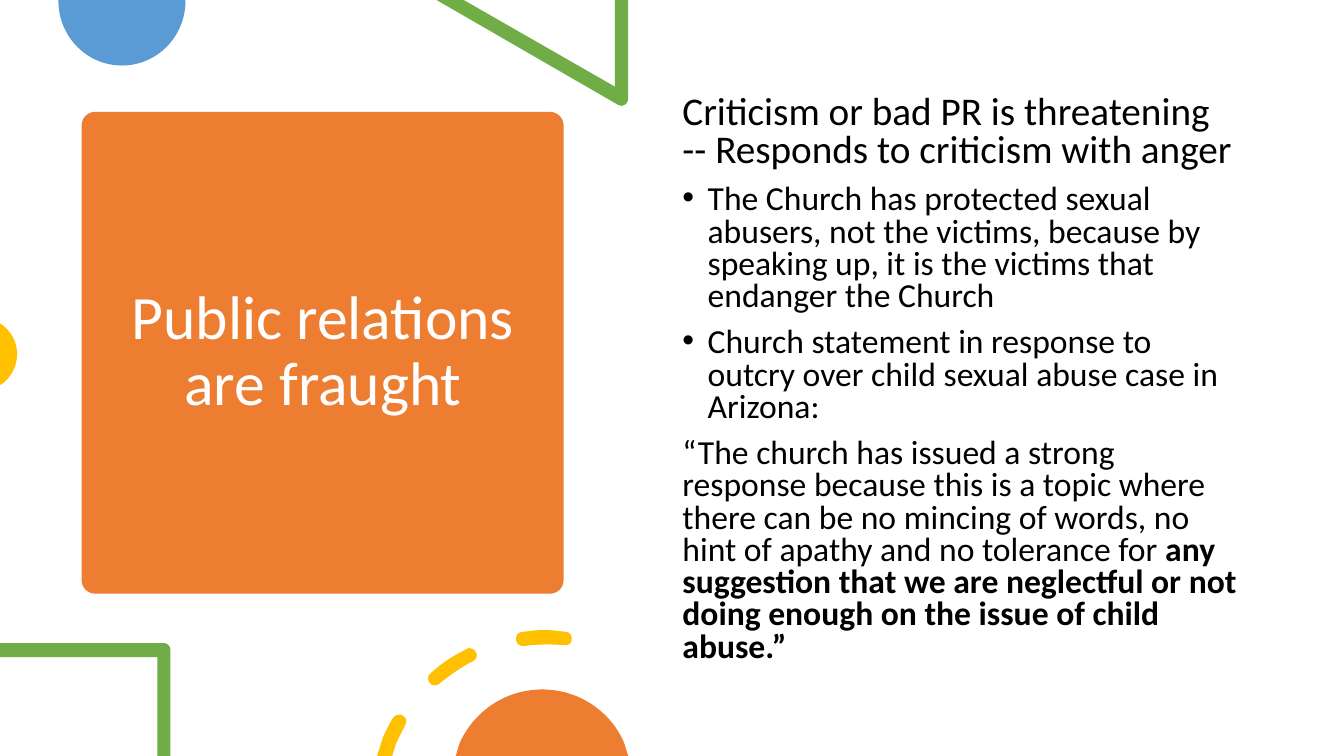
from lxml import etree
from pptx import Presentation
from pptx.dml.color import RGBColor
from pptx.enum.shapes import MSO_SHAPE
from pptx.enum.text import MSO_ANCHOR, PP_ALIGN
from pptx.oxml.ns import qn
from pptx.util import Pt

PX = 9144  # EMU per px, 100 px to the inch
ROUNDED = MSO_SHAPE.ROUNDED_RECTANGLE
TOP, MIDDLE = MSO_ANCHOR.TOP, MSO_ANCHOR.MIDDLE
LEFT, CENTER = PP_ALIGN.LEFT, PP_ALIGN.CENTER

ORANGE = RGBColor(0xED, 0x7D, 0x31)
BLUE = RGBColor(0x5B, 0x9B, 0xD5)
GREEN = RGBColor(0x70, 0xAD, 0x47)
YELLOW = RGBColor(0xFF, 0xC0, 0x00)
WHITE = RGBColor(0xFF, 0xFF, 0xFF)
BLACK = RGBColor(0x00, 0x00, 0x00)

BULLET_INDENT = 25

prs = Presentation()
prs.slide_width, prs.slide_height = 1333 * PX, 750 * PX
slide = prs.slides.add_slide(prs.slide_layouts[6])
shapes = slide.shapes


def paint(shape, color):
    shape.shadow.inherit = False
    shape.fill.solid()
    shape.fill.fore_color.rgb = color
    shape.line.fill.background()


def bend(line, curve, left, top):
    """Turn a straight segment into the Bezier curve (x1, y1, x2, y2, x, y)."""
    line.tag = qn("a:cubicBezTo")
    for point in list(line):
        line.remove(point)
    for x, y in zip(curve[::2], curve[1::2]):
        etree.SubElement(line, qn("a:pt"), x=str(x - left), y=str(y - top))


# Title card
card = shapes.add_shape(ROUNDED, 81 * PX, 111 * PX, 478 * PX, 478 * PX)
card.adjustments[0] = 0.028
paint(card, ORANGE)

# Title and body: paragraphs are (size, bulleted, [(text, bold), ...])
title = [(44, False, [("Public relations are fraught", False)])]
body = [
    (28, False, [("Criticism or bad PR is threatening -- Responds to criticism with anger",
                  False)]),
    (24, True, [("The Church has protected sexual abusers, not the victims, because by "
                 "speaking up, it is the victims that endanger the Church", False)]),
    (24, True, [("Church statement in response to outcry over child sexual abuse case in "
                 "Arizona:", False)]),
    (24, False, [("“The church has issued a strong response because this is a topic where "
                  "there can be no mincing of words, no hint of apathy and no tolerance for",
                  False),
                 (" any suggestion that we are neglectful or not doing enough on the issue "
                  "of child abuse.”", True)]),
]

for box, paragraphs, color, anchor, layout in (
    ((105, 122, 431, 456), title, WHITE, MIDDLE,
     {"alignment": CENTER, "line_spacing": 0.9, "space_before": Pt(0)}),
    ((667, 90, 575, 595), body, BLACK, TOP,
     {"alignment": LEFT, "line_spacing": 0.8, "space_before": Pt(10)}),
):
    frame = shapes.add_textbox(*(length * PX for length in box)).text_frame
    frame.word_wrap = True
    frame.vertical_anchor = anchor
    for number, (size, bulleted, runs) in enumerate(paragraphs):
        paragraph = frame.add_paragraph() if number else frame.paragraphs[0]
        for attribute, value in layout.items():
            setattr(paragraph, attribute, value)
        if bulleted:
            properties = paragraph._p.get_or_add_pPr()
            properties.set("marL", str(BULLET_INDENT * PX))
            properties.set("indent", str(-BULLET_INDENT * PX))
            etree.SubElement(properties, qn("a:buFont")).set("typeface", "Arial")
            etree.SubElement(properties, qn("a:buChar")).set("char", "•")
        for text, bold in runs:
            run = paragraph.add_run()
            run.text = text
            run.font.color.rgb = color
            for attribute, value in {"name": "Calibri", "size": Pt(size), "bold": bold}.items():
                setattr(run.font, attribute, value)

# Decorations cut off by the slide edges: corners (x, y) and curves (x1, y1, x2, y2, x, y)
blue_disc = [(184, 0), (58, 0), (58, 1), (58, 36, 86, 65, 121, 65),
             (156, 65, 184, 36, 184, 1)]
green_triangle = [(623, 0), (610, 0), (610, 86), (460, 0), (433, 0), (613, 104),
                  (614, 105, 615, 105, 616, 105), (620, 105, 623, 102, 623, 98)]
yellow_disc = [(0, 321), (0, 382), (2, 381), (11, 374, 17, 364, 17, 351),
               (17, 339, 11, 329, 2, 322)]
green_frame = [(163, 638), (0, 638), (0, 652), (156, 652), (156, 750), (169, 750),
               (169, 645), (169, 641, 166, 638, 163, 638)]
lower_dash = [(397, 709), (394, 708, 392, 710, 390, 712), (386, 718, 383, 725, 380, 731),
              (374, 750), (389, 750), (393, 737), (396, 731, 399, 725, 402, 719),
              (404, 716, 403, 711, 399, 710), (399, 709, 398, 709, 397, 709)]
middle_dash = [(465, 643), (465, 643, 464, 643, 463, 644), (450, 650, 438, 658, 427, 668),
               (424, 670, 424, 675, 426, 677), (427, 679, 429, 680, 431, 680),
               (433, 680, 435, 679, 436, 678), (446, 670, 457, 662, 469, 656),
               (473, 654, 474, 650, 472, 647), (471, 644, 468, 643, 465, 643)]
upper_dash = [(540, 625), (532, 625, 525, 626, 518, 627), (514, 627, 511, 631, 512, 635),
              (512, 638, 515, 641, 519, 641), (533, 639, 546, 639, 560, 640),
              (563, 641, 567, 638, 567, 635), (568, 631, 565, 627, 562, 627),
              (554, 626, 547, 625, 540, 625)]
orange_disc = [(538, 684), (501, 684, 470, 706, 456, 737), (452, 750), (623, 750),
               (619, 737), (606, 706, 574, 684, 538, 684)]

for color, contours in (
    (BLUE, [blue_disc]),
    (GREEN, [green_triangle]),
    (YELLOW, [yellow_disc]),
    (GREEN, [green_frame]),
    (YELLOW, [lower_dash, middle_dash, upper_dash]),
    (ORANGE, [orange_disc]),
):
    builder = shapes.build_freeform(*contours[0][0], scale=PX)
    for number, contour in enumerate(contours):
        if number:
            builder.move_to(*contour[0])
        builder.add_line_segments([step[-2:] for step in contour[1:]], close=True)
    decoration = builder.convert_to_shape()
    paint(decoration, color)
    left, top = round(decoration.left / PX), round(decoration.top / PX)
    steps = [step for contour in contours for step in contour[1:]]
    lines = list(decoration._element.iter(qn("a:lnTo")))
    for line, step in zip(lines, steps):
        if len(step) == 6:
            bend(line, step, left, top)

prs.save("out.pptx")
